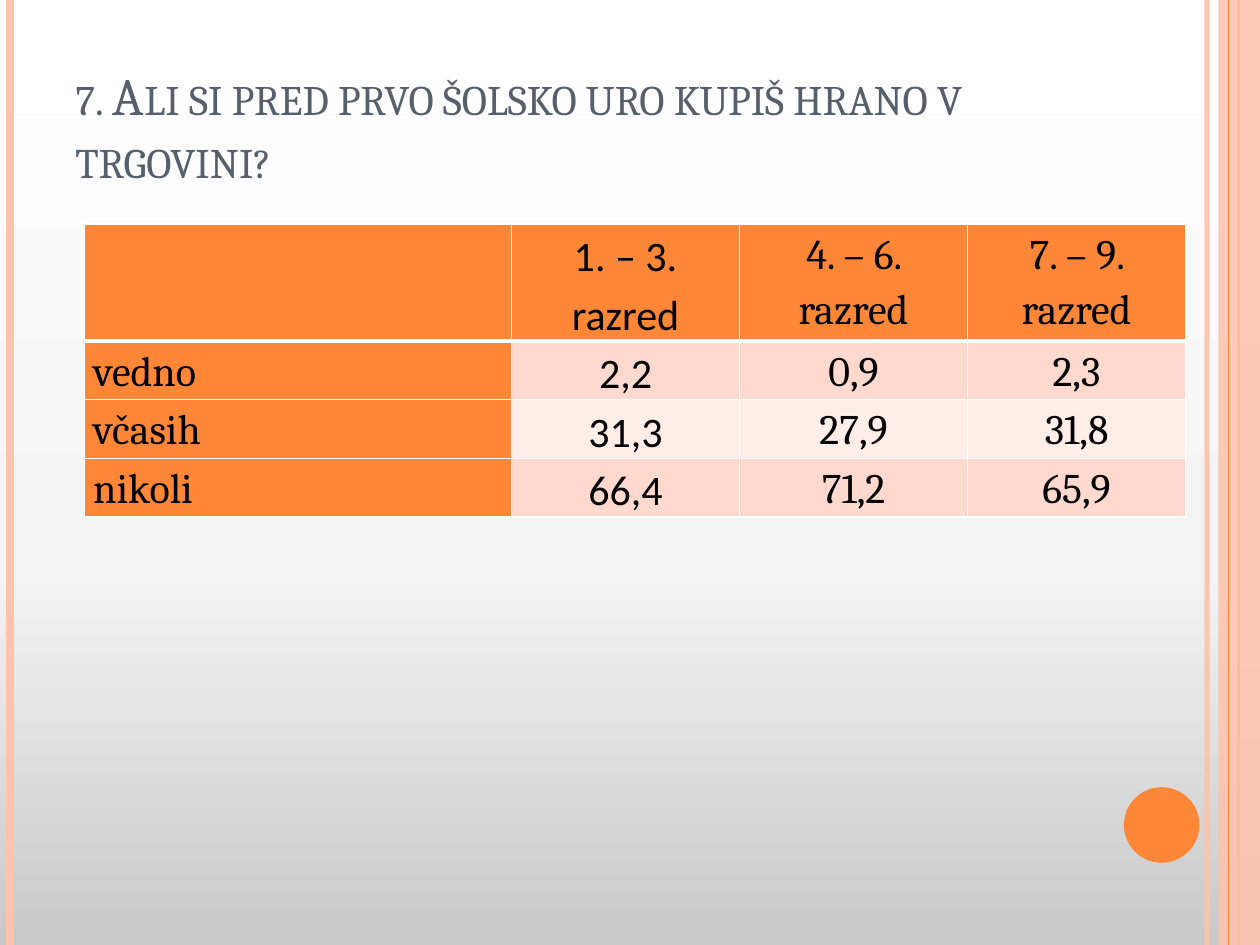
"""Build the survey slide on buying food before the first lesson."""
from copy import deepcopy
from lxml import etree
from pptx import Presentation, util as u
from pptx.dml.color import RGBColor
from pptx.enum import shapes, text
from pptx.oxml.ns import qn

COLORS = {"orange": "FE8637", "peach": "FEC3AE", "band": "FFD9CE", "light": "FFEDE8",
          "title": "575F6D", "black": "000000", "white": "FFFFFF"}
BACKGROUND = [(0, "C9C9C9"), (0.4, "F4F4F4"), (1, "FFFFFF")]


def paint(fill, name, alpha=100):
    fill.solid()
    fill.fore_color.rgb = RGBColor.from_string(COLORS[name])
    if alpha < 100:
        clr = fill._xPr.find(".//" + qn("a:srgbClr"))
        etree.SubElement(clr, qn("a:alpha"), val=str(alpha * 1000))


def border(cell, side, width):
    ln = etree.SubElement(cell._tc.get_or_add_tcPr(), qn("a:ln" + side), w=str(u.Pt(width)))
    solid = etree.SubElement(ln, qn("a:solidFill"))
    etree.SubElement(solid, qn("a:srgbClr"), val=COLORS["white"])


prs = Presentation()
prs.slide_width, prs.slide_height = u.Inches(10), u.Inches(7.5)
W, H = prs.slide_width, prs.slide_height
s = prs.slides.add_slide(prs.slide_layouts[6])

bg = s.background.fill
bg.gradient()
bg.gradient_angle = 90
stop_list = next(s._element.iter(qn("a:gsLst")))
stop_list.append(deepcopy(stop_list[-1]))
for stop, (position, color) in zip(bg.gradient_stops, BACKGROUND):
    stop.position = position
    stop.color.rgb = RGBColor.from_string(color)

stripes = [(0.958, "peach", 3, 93), (0.008, "peach", 4.5, 100),
           (0.983, "orange", 1.5, 100), (0.975, "orange", 0.75, 100)]
for i, (x, color, width, alpha) in enumerate(stripes):
    if i == 3:
        sp = s.shapes.add_shape(shapes.MSO_SHAPE.RECTANGLE, int(W * 0.967), 0, int(W * 0.033), H)
        sp.shadow.inherit = False
        paint(sp.fill, "peach", 87)
        sp.line.fill.background()
    line = s.shapes.add_connector(shapes.MSO_CONNECTOR.STRAIGHT, int(W * x), 0, int(W * x), H)
    line.line.width = u.Pt(width)
    paint(line.line.fill, color, alpha)
    etree.SubElement(line._element.spPr, qn("a:effectLst"))

dot = s.shapes.add_shape(shapes.MSO_SHAPE.OVAL, int(W * 0.892), int(H * 0.833),
                         int(W * 0.06), int(W * 0.06))
dot.shadow.inherit = False
paint(dot.fill, "orange")
dot.line.fill.background()

title = s.shapes.add_textbox(int(W * 0.05), int(H * 0.04), int(W * 0.817), int(H * 0.167))
tf = title.text_frame
tf.word_wrap = True
tf.vertical_anchor = text.MSO_ANCHOR.BOTTOM
p = tf.paragraphs[0]
r = p.add_run()
r.text = "7. Ali si pred prvo šolsko uro kupiš hrano v trgovini?"
r.font.name, r.font.size = "Cambria", u.Pt(30)
r.font.color.rgb = RGBColor.from_string(COLORS["title"])
r.font._element.set("cap", "small")

rows = [["", "1. – 3. razred", "4. – 6. razred", "7. – 9. razred"],
        ["vedno", "2,2", "0,9", "2,3"],
        ["včasih", "31,3", "27,9", "31,8"],
        ["nikoli", "66,4", "71,2", "65,9"]]
table = s.shapes.add_table(4, 4, int(W * 0.067), int(H * 0.237),
                           int(W * 0.874), int(H * 0.31)).table
for column, share in zip(table.columns, [0.339, 0.181, 0.181, 0.173]):
    column.width = int(W * share)
for row, share in zip(table.rows, [0.124, 0.062, 0.062, 0.062]):
    row.height = int(H * share)

for i, row in enumerate(rows):
    for j, value in enumerate(row):
        cell = table.cell(i, j)
        cell.margin_left = cell.margin_right = u.Inches(0.07)
        cell.margin_top = cell.margin_bottom = 0
        for side in "LRTB":
            heavy = (i, side) in [(0, "B"), (1, "T")]
            border(cell, side, 3 if heavy else 1)
        paint(cell.fill, "orange" if i == 0 or j == 0 else "band" if i % 2 else "light")
        p = cell.text_frame.paragraphs[0]
        p.text = value
        p.line_spacing = 1.15
        p.alignment = text.PP_ALIGN.CENTER if j else text.PP_ALIGN.LEFT
        p.font.name = "Calibri" if j == 1 else "Cambria"
        p.font.size, p.font.bold = u.Pt(24), False
        p.font.color.rgb = RGBColor.from_string(COLORS["black"])

prs.save("out.pptx")
